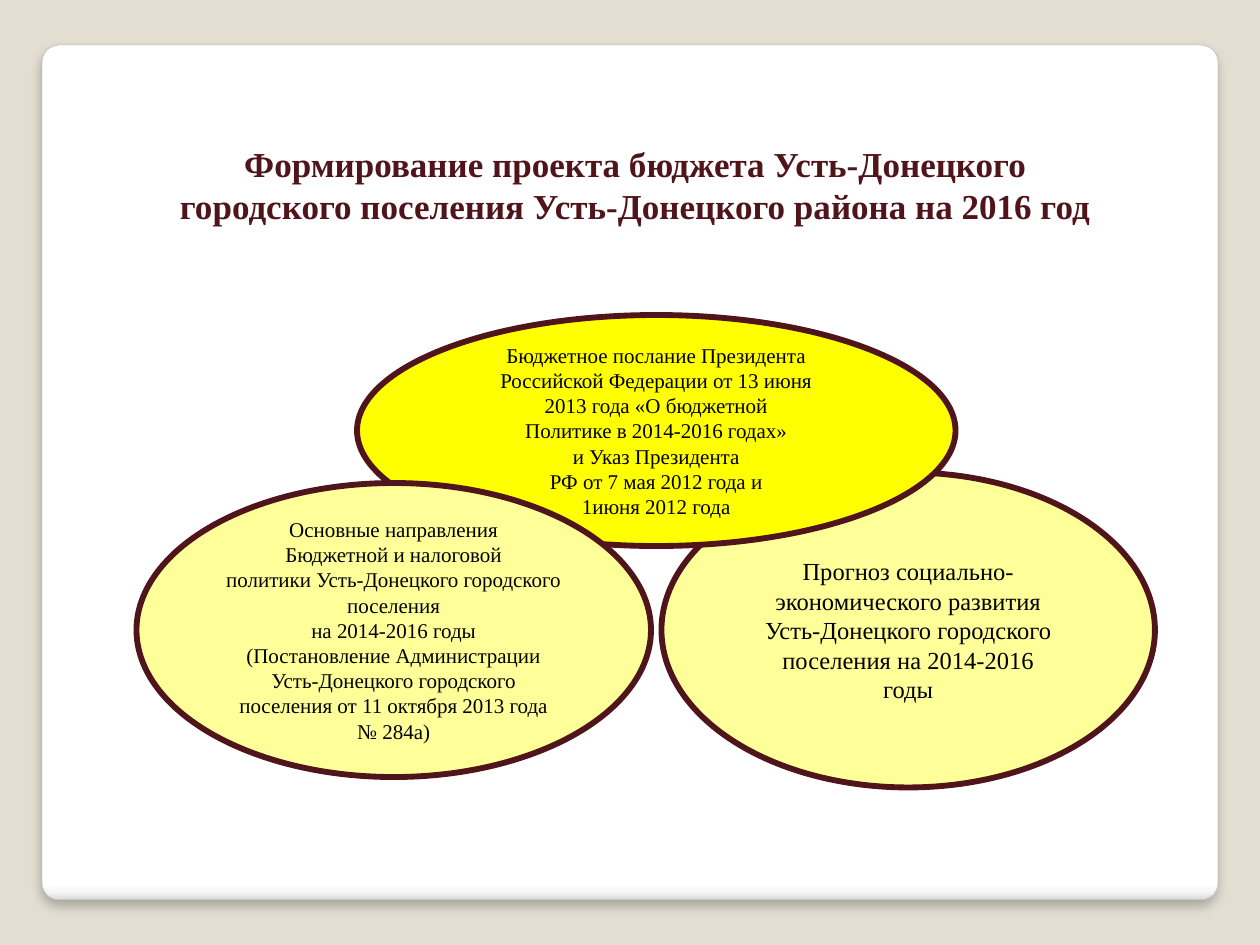
import pptx
import pptx.dml.color
import pptx.enum.shapes
import pptx.enum.text
import pptx.oxml
import pptx.oxml.ns
import pptx.util

COLORS = {
    "background": "E3DED1",
    "card_edge": "A4A4A4",
    "maroon": "50141B",
    "yellow": "FFFF00",
    "pale_yellow": "FFFF99",
    "text": "000000",
}
CARD_STOPS = [(0, "FFFFFF"), (98, "FFFFFF"), (99, "F7F7F7"), (100, "DADADA")]
FONT = "Times New Roman"
COLUMNS, ROWS = 120, 90
WIDTH, HEIGHT = pptx.util.Inches(10), pptx.util.Inches(7.5)

TITLE = ("Формирование проекта бюджета Усть-Донецкого городского поселения "
         "Усть-Донецкого района на 2016 год")
FORECAST = [
    "Прогноз социально-экономического развития",
    "Усть-Донецкого городского",
    "поселения на 2014-2016",
    "годы",
]
ADDRESS = [
    "Бюджетное послание Президента",
    "Российской Федерации от 13 июня",
    "2013 года «О бюджетной",
    "Политике в 2014-2016 годах»",
    "и Указ Президента",
    "РФ от 7 мая 2012 года и",
    "1июня 2012 года",
]
POLICY = [
    "Основные направления",
    "Бюджетной и налоговой",
    "политики Усть-Донецкого городского",
    "поселения",
    "на 2014-2016 годы",
    "(Постановление Администрации",
    "Усть-Донецкого городского",
    "поселения от 11 октября 2013 года",
    "№ 284а)",
]


def rgb(name):
    return pptx.dml.color.RGBColor.from_string(COLORS[name])


def grid(column, row, columns, rows):
    """Turn grid columns and rows into left, top, width and height."""
    return (int(WIDTH * column / COLUMNS), int(HEIGHT * row / ROWS),
            int(WIDTH * columns / COLUMNS), int(HEIGHT * rows / ROWS))


def set_text(tf, lines, size, color, bold=False):
    tf.word_wrap = True
    tf.text = "\n".join(lines)
    for p in tf.paragraphs:
        p.alignment = pptx.enum.text.PP_ALIGN.CENTER
        for r in p.runs:
            r.font.name = FONT
            r.font.size = pptx.util.Pt(size)
            r.font.bold = bold
            r.font.color.rgb = rgb(color)


def add_card(s):
    """Add the white panel with a shaded lower edge and a soft shadow."""
    sp = s.shapes.add_shape(pptx.enum.shapes.MSO_SHAPE.ROUNDED_RECTANGLE,
                            *grid(4, 4.3, 112, 81.4))
    sp.adjustments[0] = 0.02
    sp.line.color.rgb = rgb("card_edge")
    sp.line.width = pptx.util.Pt(0.16)
    ns = pptx.oxml.ns.nsdecls("a")
    stops = "".join(
        f'<a:gs pos="{pos * 1000}"><a:srgbClr val="{color}"/></a:gs>'
        for pos, color in CARD_STOPS)
    gradient = pptx.oxml.parse_xml(
        f'<a:gradFill {ns} rotWithShape="1"><a:gsLst>{stops}</a:gsLst>'
        '<a:lin ang="5400000" scaled="0"/></a:gradFill>')
    shadow = pptx.oxml.parse_xml(
        f'<a:effectLst {ns}><a:outerShdw blurRad="{pptx.util.Pt(6)}" '
        f'dist="{pptx.util.Pt(4)}" dir="5400000" algn="t" rotWithShape="0">'
        '<a:srgbClr val="000000"><a:alpha val="25000"/></a:srgbClr>'
        '</a:outerShdw></a:effectLst>')
    outline = sp.line._get_or_add_ln()
    outline.addprevious(gradient)
    outline.addnext(shadow)


def add_title(s, text):
    tf = s.shapes.add_textbox(*grid(14, 13, 93, 9.3)).text_frame
    set_text(tf, [text], 20, "maroon", bold=True)
    tf.auto_size = pptx.enum.text.MSO_AUTO_SIZE.SHAPE_TO_FIT_TEXT


def add_ellipse(s, cells, fill, lines, size):
    sp = s.shapes.add_shape(pptx.enum.shapes.MSO_SHAPE.OVAL, *grid(*cells))
    sp.shadow.inherit = False
    sp.fill.solid()
    sp.fill.fore_color.rgb = rgb(fill)
    sp.line.color.rgb = rgb("maroon")
    sp.line.width = pptx.util.Pt(3.35)
    sp.text_frame.vertical_anchor = pptx.enum.text.MSO_ANCHOR.MIDDLE
    set_text(sp.text_frame, lines, size, "text")


def main():
    prs = pptx.Presentation()
    prs.slide_width, prs.slide_height = WIDTH, HEIGHT
    s = prs.slides.add_slide(prs.slide_layouts[6])
    s.background.fill.solid()
    s.background.fill.fore_color.rgb = rgb("background")

    add_card(s)
    add_ellipse(s, (63, 45, 47, 30), "pale_yellow", FORECAST, 14)
    add_ellipse(s, (34, 30, 57, 22), "yellow", ADDRESS, 12)
    add_ellipse(s, (13, 46, 49, 28), "pale_yellow", POLICY, 12)
    add_title(s, TITLE)
    prs.save("out.pptx")


if __name__ == "__main__":
    main()
